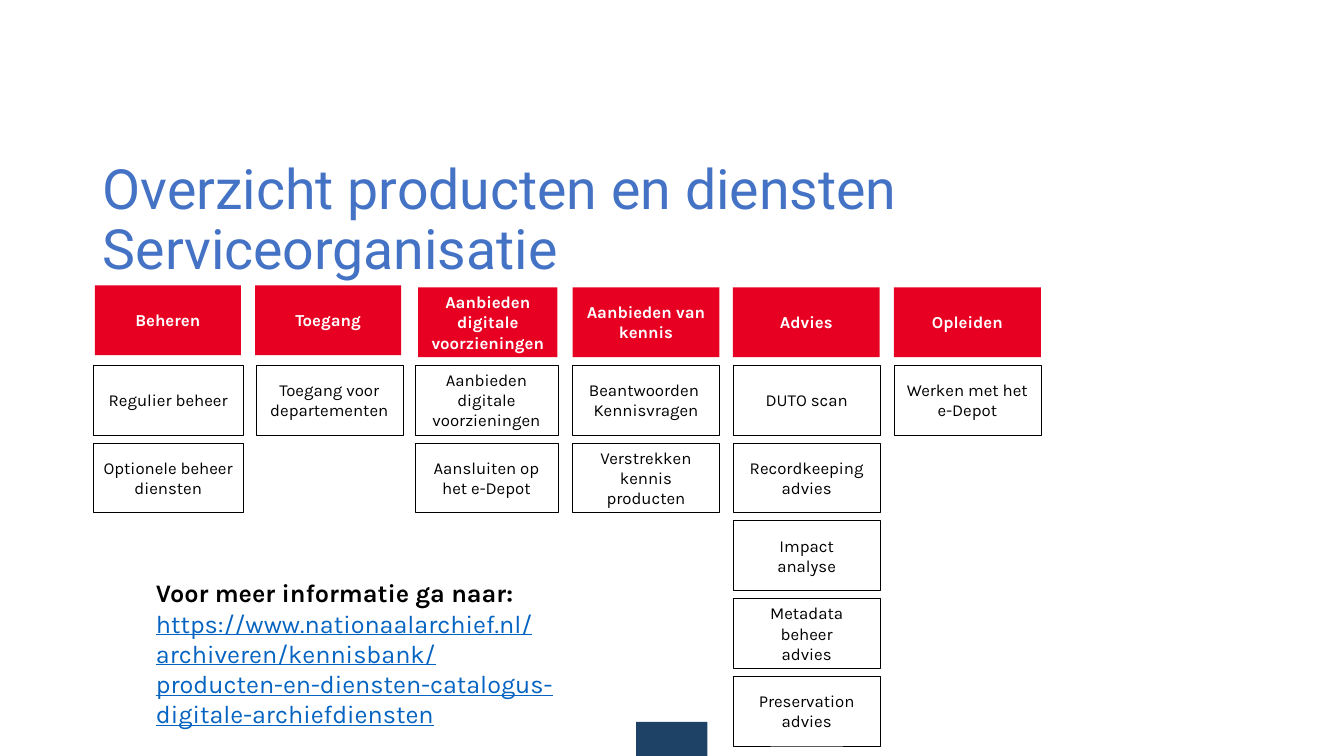
from pptx import Presentation
from pptx.dml.color import RGBColor
from pptx.enum.shapes import MSO_SHAPE
from pptx.enum.text import MSO_ANCHOR, MSO_AUTO_SIZE, PP_ALIGN
from pptx.util import Cm, Pt

RECT = MSO_SHAPE.RECTANGLE
MID, TOP = MSO_ANCHOR.MIDDLE, MSO_ANCHOR.TOP
LEFT, MIDDLE = PP_ALIGN.LEFT, PP_ALIGN.CENTER
INK = {"red": "E70022", "navy": "1E4266", "blue": "4472C4",
       "link": "0563C1", "black": "000000", "white": "FFFFFF"}


def write(frame, text, size=12, font="Karla", ink="black", bold=False, line=False,
          align=MIDDLE, anchor=MID, pad=0.2, add=False, space=1.0):
    """Put one paragraph in frame, after the existing ones if add is set."""
    frame.word_wrap = True
    frame.auto_size = MSO_AUTO_SIZE.NONE
    frame.vertical_anchor = anchor
    frame.margin_left = frame.margin_right = Cm(pad)
    para = frame.add_paragraph() if add else frame.paragraphs[0]
    para.text = text.replace("\n", "\v")
    para.alignment = align
    para.line_spacing = space
    for run in para.runs:
        run.font.name = font
        run.font.size = Pt(size)
        run.font.bold = bold
        run.font.underline = line
        run.font.color.rgb = RGBColor.from_string(INK[ink])


def block(left, top, width, height, fill, edge=None):
    shape = slide.shapes.add_shape(RECT, Cm(left), Cm(top), Cm(width), Cm(height))
    shape.shadow.inherit = False
    shape.fill.solid()
    shape.fill.fore_color.rgb = RGBColor.from_string(INK[fill])
    if edge:
        shape.line.color.rgb = RGBColor.from_string(INK[edge])
        shape.line.width = Pt(0.25)
    else:
        shape.line.fill.background()
    return shape.text_frame


deck = Presentation()
deck.slide_width, deck.slide_height = Cm(33.87), Cm(19.05)
slide = deck.slides.add_slide(deck.slide_layouts[5])

block(16.03, 18.19, 1.8, 0.86, "navy")

title = slide.shapes.title
title.left, title.top, title.width, title.height = Cm(2.34), Cm(3.99), Cm(29.21), Cm(3.2)
write(title.text_frame, "Overzicht producten en diensten Serviceorganisatie", size=39.6,
      font="Roboto", ink="blue", align=LEFT, pad=0.25, space=0.9)

# Heading, its left, top and width, then left and width of the boxes below it
groups = [
    ("Beheren", 2.39, 7.19, 3.68, 2.34, 3.8,
     ["Regulier beheer", "Optionele beheer\ndiensten"]),
    ("Toegang", 6.43, 7.19, 3.68, 6.45, 3.7, ["Toegang voor departementen"]),
    ("Aanbieden digitale voorzieningen", 10.54, 7.24, 3.51, 10.46, 3.6,
     ["Aanbieden\ndigitale voorzieningen", "Aansluiten op het e-Depot"]),
    ("Aanbieden van kennis", 14.43, 7.24, 3.7, 14.43, 3.7,
     ["Beantwoorden \nKennisvragen", "Verstrekken kennis\nproducten"]),
    ("Advies", 18.47, 7.24, 3.7, 18.48, 3.7,
     ["DUTO scan", "Recordkeeping advies", "Impact\nanalyse",
      "Metadata\nbeheer\nadvies", "Preservation advies"]),
    ("Opleiden", 22.53, 7.24, 3.7, 22.53, 3.7, ["Werken met het e-Depot"]),
]
TALL, FIRST, STEP = 1.76, 9.2, 1.96
for head, left, top, width, start, wide, items in groups:
    write(block(left, top, width, TALL, "red"), head, ink="white", bold=True)
    for row, item in enumerate(items):
        write(block(start, FIRST + row * STEP, wide, TALL, "white", "black"), item)

info = slide.shapes.add_textbox(Cm(3.68), Cm(14.43), Cm(10.72), Cm(4.6)).text_frame
look = {"size": 18, "align": LEFT, "anchor": TOP, "pad": 0.25}
write(info, "Voor meer informatie ga naar:", bold=True, **look)
write(info, "https://www.nationaalarchief.nl/archiveren/kennisbank/"
      "producten-en-diensten-catalogus-digitale-archiefdiensten",
      ink="link", line=True, add=True, **look)

deck.save("out.pptx")
